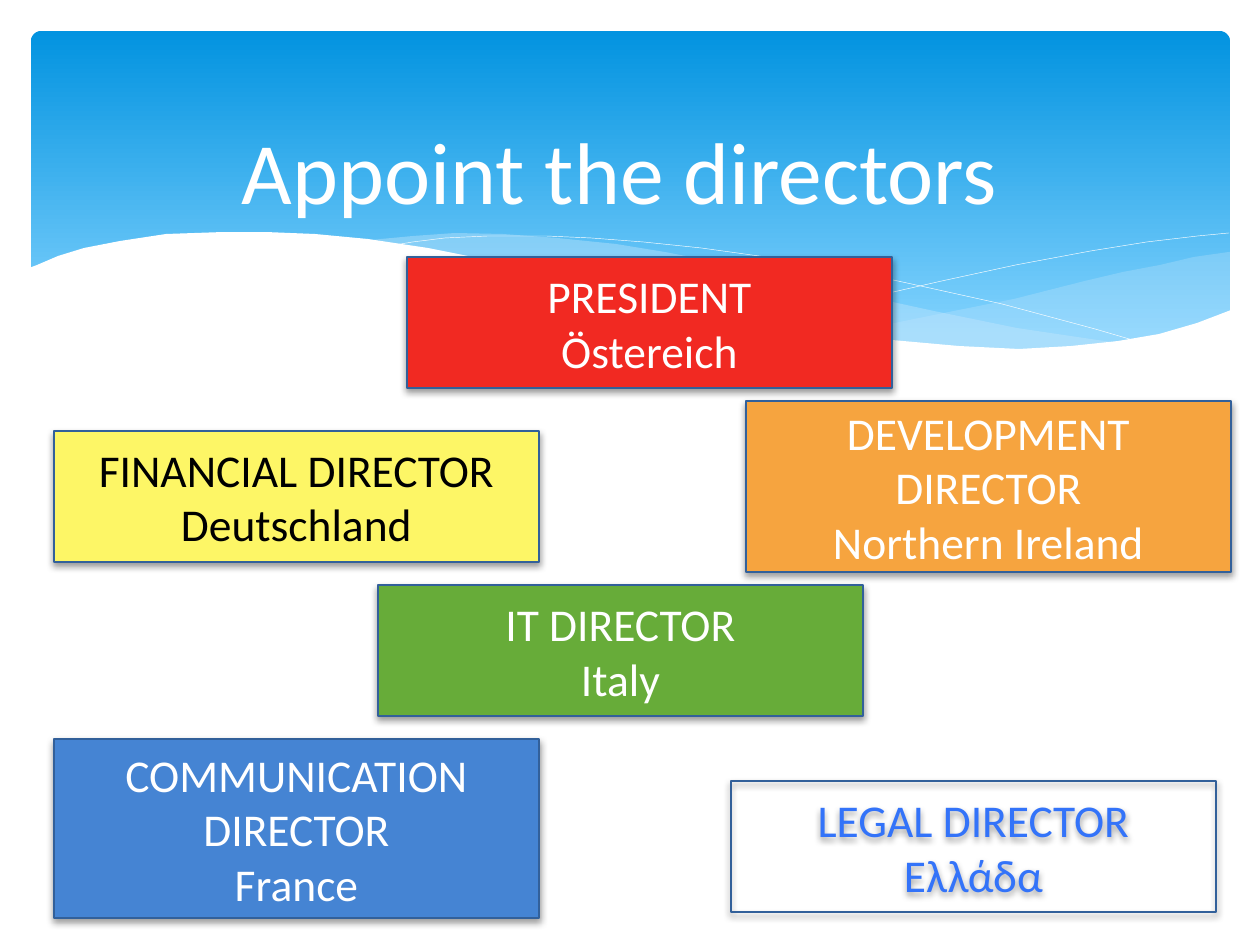
import pptx
import pptx.util
import pptx.dml.color
import pptx.enum.shapes
import pptx.enum.text
import pptx.oxml
import pptx.oxml.ns

PX = 914400 / 126
FONT = "Calibri"
TITLE = "Appoint the directors"
BOX_WIDTH = 485
INSET = 6

DIRECTORS = [
    ("PRESIDENT", "Östereich", 407, 257, 131, "F12922", "FFFFFF"),
    ("FINANCIAL DIRECTOR", "Deutschland", 54, 431, 131, "FDF666", "000000"),
    ("DEVELOPMENT DIRECTOR", "Northern Ireland", 746, 401, 171, "F6A43F", "FFFFFF"),
    ("COMMUNICATION DIRECTOR", "France", 54, 739, 179, "4584D3", "FFFFFF"),
    ("LEGAL DIRECTOR", "Ελλάδα", 731, 781, 131, None, "3373F9"),
    ("IT DIRECTOR", "Italy", 378, 585, 131, "67AC39", "FFFFFF"),
]

RIGHT_WAVE = [
    (1229, 252), (1194, 257), (1160, 265), (1123, 272), (1085, 281), (1014, 299),
    (949, 312), (890, 324), (833, 334), (871, 339), (906, 343), (939, 346),
    (984, 349), (1026, 350), (1076, 348), (1120, 343), (1160, 334), (1196, 324),
    (1230, 311), (1230, 252),
]
LONG_WAVE = [
    (1125, 344), (1091, 339), (1017, 328), (934, 311), (842, 291), (772, 275),
    (717, 262), (665, 252), (616, 244), (557, 238), (503, 234), (455, 233),
    (413, 236), (360, 241), (407, 247), (456, 256), (509, 266), (566, 280),
    (668, 302), (736, 318), (799, 329), (857, 338), (910, 345), (959, 349),
    (1003, 350), (1056, 350), (1092, 348),
]
FALLING_LINE = [
    (389, 246), (413, 242), (445, 238), (488, 236), (546, 236), (591, 238),
    (643, 242), (701, 248), (766, 257), (838, 268), (916, 285), (1002, 304),
    (1095, 329), (1143, 343),
]
RISING_LINE = [
    (772, 324), (823, 310), (876, 296), (942, 281), (1016, 265), (1091, 251),
    (1147, 242), (1198, 236), (1229, 233),
]
WHITE_WAVE = [
    (1231, 310), (1197, 323), (1159, 334), (1118, 341), (1071, 346), (1019, 349),
    (959, 346), (892, 340), (815, 330), (760, 320), (699, 309), (634, 294),
    (563, 277), (493, 261), (428, 248), (368, 239), (315, 234), (266, 232),
    (223, 232), (166, 234), (120, 241), (84, 248), (58, 256), (37, 265),
    (29, 268), (29, 415), (1231, 415),
]
CURVES = [
    (RIGHT_WAVE, "C6E7FC", 29, None),
    (LONG_WAVE, "C6E7FC", 40, None),
    (FALLING_LINE, None, 100, "FFFFFF"),
    (RISING_LINE, None, 100, "FFFFFF"),
    (WHITE_WAVE, "FFFFFF", 100, None),
]

SHADOW = (
    f'<a:effectLst {pptx.oxml.ns.nsdecls("a")}>'
    '<a:outerShdw blurRad="50800" dist="25400" dir="5400000" rotWithShape="0">'
    '<a:srgbClr val="000000"><a:alpha val="38000"/></a:srgbClr>'
    '</a:outerShdw></a:effectLst>'
)


def px(length):
    return pptx.util.Emu(round(length * PX))


def colour(value):
    return pptx.dml.color.RGBColor.from_string(value)


def paint(shape, fill, line, width=1):
    shape.shadow.inherit = False
    for part, value in ((shape.fill, fill), (shape.line.fill, line)):
        if value:
            part.solid()
            part.fore_color.rgb = colour(value)
        else:
            part.background()
    if line:
        shape.line.width = pptx.util.Pt(width)


def write(shape, lines, size, text_colour):
    frame = shape.text_frame
    frame.text = "\n".join(lines)
    frame.word_wrap = True
    frame.auto_size = pptx.enum.text.MSO_AUTO_SIZE.NONE
    frame.vertical_anchor = pptx.enum.text.MSO_ANCHOR.MIDDLE
    frame.margin_left = frame.margin_right = px(INSET)
    frame.margin_top = frame.margin_bottom = px(INSET)
    for paragraph in frame.paragraphs:
        paragraph.alignment = pptx.enum.text.PP_ALIGN.CENTER
        paragraph.font.name = FONT
        paragraph.font.size = pptx.util.Pt(size)
        paragraph.font.color.rgb = colour(text_colour)


def add_banner(shapes):
    banner = shapes.add_shape(
        pptx.enum.shapes.MSO_SHAPE.ROUNDED_RECTANGLE, px(31), px(31), px(1199), px(340))
    banner.adjustments[0] = 0.03
    paint(banner, None, None)
    banner.fill.gradient()
    banner.fill.gradient_angle = 270
    stops = ((0, "0293E0"), (0.9, "83D3FE"))
    for stop, (position, value) in zip(banner.fill.gradient_stops, stops):
        stop.position = position
        stop.color.rgb = colour(value)


def add_curve(shapes, points, fill, opacity, line):
    builder = shapes.build_freeform(*points[0], scale=PX)
    builder.add_line_segments(points[1:], close=fill is not None)
    curve = builder.convert_to_shape()
    paint(curve, fill, line, 0.25)
    if opacity < 100:
        tint = curve.element.spPr.find(".//" + pptx.oxml.ns.qn("a:srgbClr"))
        tint.append(pptx.oxml.parse_xml(
            f'<a:alpha {pptx.oxml.ns.nsdecls("a")} val="{opacity * 1000}"/>'))


def add_director(shapes, role, country, left, top, height, fill, text_colour):
    box = shapes.add_shape(
        pptx.enum.shapes.MSO_SHAPE.RECTANGLE, px(left), px(top), px(BOX_WIDTH), px(height))
    paint(box, fill, "32609A", 1.25)
    properties = box.element.spPr
    properties.replace(
        properties.find(pptx.oxml.ns.qn("a:effectLst")), pptx.oxml.parse_xml(SHADOW))
    write(box, (role, country), 26, text_colour)


def main():
    deck = pptx.Presentation()
    deck.slide_width, deck.slide_height = px(1260), px(945)
    slide = deck.slides.add_slide(deck.slide_layouts[5])
    shapes = slide.shapes

    add_banner(shapes)
    for curve in CURVES:
        add_curve(shapes, *curve)

    title = shapes.title
    title.left, title.top, title.width, title.height = px(53), px(83), px(1134), px(173)
    write(title, [TITLE], 50, "FFFFFF")
    title.element.getparent().append(title.element)

    for director in DIRECTORS:
        add_director(shapes, *director)
    deck.save("out.pptx")


if __name__ == "__main__":
    main()
